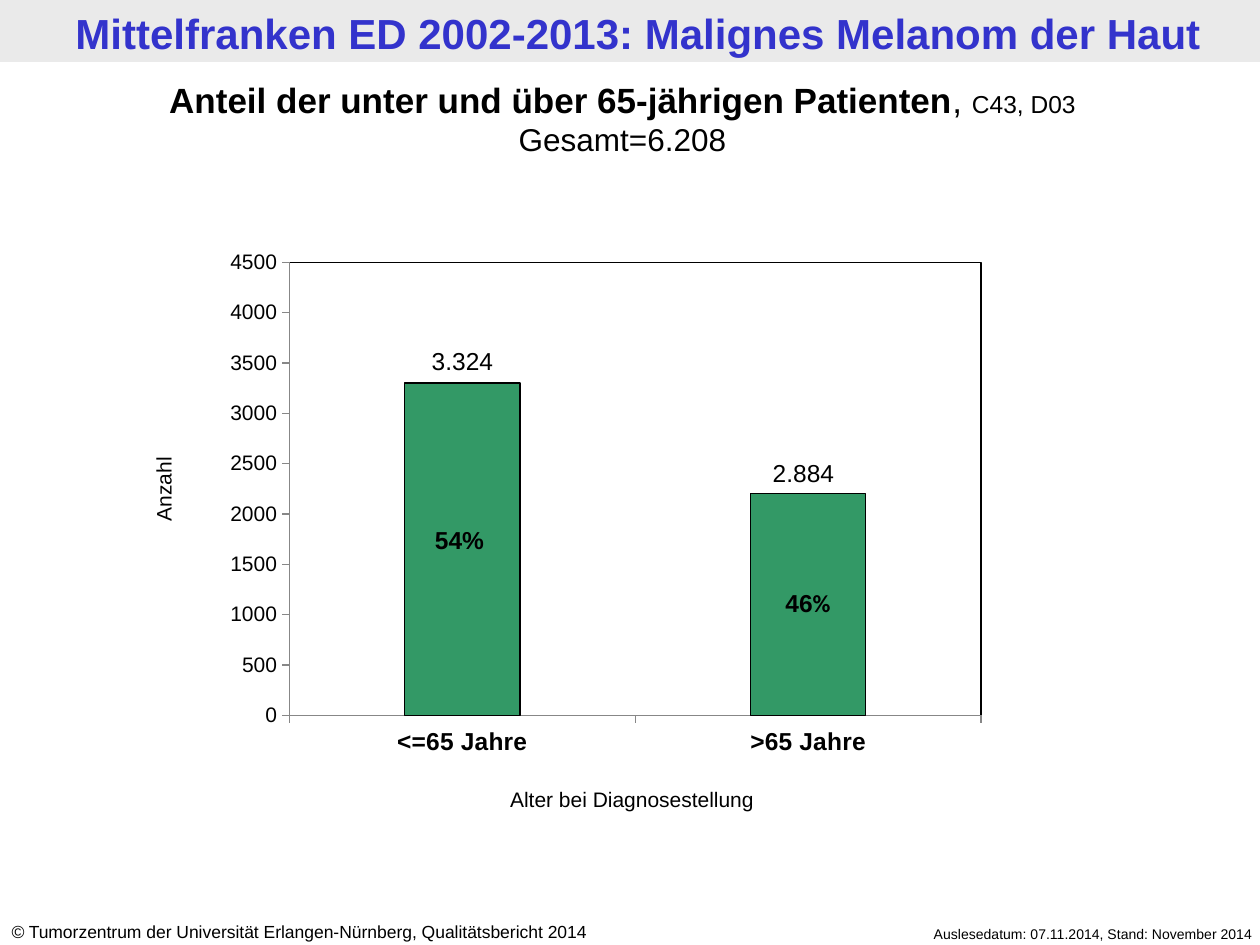
import pptx
import pptx.chart.data
import pptx.dml.color
import pptx.enum.chart
import pptx.enum.shapes
import pptx.enum.text
import pptx.oxml
import pptx.oxml.ns
import pptx.util
from dataclasses import dataclass

EMU_PER_PX = 914400 / 126
ALIGN = pptx.enum.text.PP_ALIGN


@dataclass(frozen=True)
class Theme:
    black: str = "000000"
    band: str = "EAEAEA"
    heading: str = "3333CC"
    bar: str = "339966"
    axis: str = "878787"
    font: str = "Arial"
    percent_font: str = "Calibri"
    title_size: int = 24
    subtitle_size: int = 20
    total_size: int = 18
    label_size: int = 14
    axis_size: int = 12
    source_size: int = 10
    date_size: int = 8
    line: float = 0.75


THEME = Theme()


def px(length):
    return pptx.util.Emu(round(length * EMU_PER_PX))


def rgb(value):
    return pptx.dml.color.RGBColor.from_string(value)


def set_font(font, size, bold=False, italic=False, color=THEME.black, name=THEME.font):
    font.size = pptx.util.Pt(size)
    font.bold = bold
    font.italic = italic
    font.name = name
    font.color.rgb = rgb(color)


def add_text(slide, box, paragraphs, align=ALIGN.CENTER, rotation=0, **base):
    """Paragraphs are a string, or lists of (text, own format) runs."""
    if isinstance(paragraphs, str):
        paragraphs = [[(paragraphs, {})]]
    textbox = slide.shapes.add_textbox(*map(px, box))
    textbox.rotation = rotation
    frame = textbox.text_frame
    frame.word_wrap = True
    frame.auto_size = pptx.enum.text.MSO_AUTO_SIZE.SHAPE_TO_FIT_TEXT
    for index, runs in enumerate(paragraphs):
        paragraph = frame.add_paragraph() if index else frame.paragraphs[0]
        paragraph.alignment = align
        for text, own in runs:
            run = paragraph.add_run()
            run.text = text
            set_font(run.font, **{**base, **own})


def add_title_band(slide):
    band = slide.shapes.add_shape(
        pptx.enum.shapes.MSO_SHAPE.RECTANGLE, *map(px, (0, 0, 1260, 62)))
    band.shadow.inherit = False
    band.fill.solid()
    band.fill.fore_color.rgb = rgb(THEME.band)
    band.line.fill.background()
    add_text(slide, (8, 1, 1260, 62), "Mittelfranken ED 2002-2013: Malignes Melanom der Haut",
             size=THEME.title_size, bold=True, color=THEME.heading)


def frame_plot(chart):
    """Fix the inner plot area and give it a black outline."""
    area = chart._chartSpace.chart.plotArea
    for old in area.findall(pptx.oxml.ns.qn("c:layout")):
        area.remove(old)
    edges = "".join(f'<c:{name} val="{value}"/>' for name, value in (
        ("layoutTarget", "inner"), ("xMode", "edge"), ("yMode", "edge"),
        ("x", 0.113), ("y", 0.142), ("w", 0.786), ("h", 0.772)))
    area.insert(0, pptx.oxml.parse_xml(
        f'<c:layout {pptx.oxml.ns.nsdecls("c")}><c:manualLayout>{edges}'
        '</c:manualLayout></c:layout>'))
    area.append(pptx.oxml.parse_xml(
        f'<c:spPr {pptx.oxml.ns.nsdecls("c", "a")}><a:noFill/>'
        f'<a:ln w="{pptx.util.Pt(THEME.line)}"><a:solidFill>'
        f'<a:srgbClr val="{THEME.black}"/></a:solidFill></a:ln></c:spPr>'))


def style_axis(axis, size, bold=False):
    axis.has_major_gridlines = False
    axis.major_tick_mark = pptx.enum.chart.XL_TICK_MARK.OUTSIDE
    axis.minor_tick_mark = pptx.enum.chart.XL_TICK_MARK.NONE
    axis.format.line.color.rgb = rgb(THEME.axis)
    axis.format.line.width = pptx.util.Pt(THEME.line)
    set_font(axis.tick_labels.font, size, bold)


def add_age_chart(slide):
    data = pptx.chart.data.CategoryChartData()
    data.categories = ["<=65 Jahre", ">65 Jahre"]
    data.add_series("Anzahl", (3300, 2200))
    chart = slide.shapes.add_chart(
        pptx.enum.chart.XL_CHART_TYPE.COLUMN_STACKED,
        *map(px, (190, 179, 880, 587)), data).chart
    chart.has_legend = False
    chart.has_title = False
    set_font(chart.font, THEME.total_size)

    plot = chart.plots[0]
    plot.vary_by_categories = False
    plot.gap_width = 200
    plot.overlap = 100
    bars = plot.series[0].format
    bars.fill.solid()
    bars.fill.fore_color.rgb = rgb(THEME.bar)
    bars.line.color.rgb = rgb(THEME.black)
    bars.line.width = pptx.util.Pt(THEME.line)

    style_axis(chart.category_axis, THEME.label_size, bold=True)
    counts = chart.value_axis
    style_axis(counts, THEME.axis_size)
    counts.minimum_scale = 0
    counts.maximum_scale = 4500
    counts.major_unit = 500
    counts.tick_labels.number_format = "0"
    counts.tick_labels.number_format_is_linked = False
    frame_plot(chart)


def main():
    deck = pptx.Presentation()
    deck.slide_width = px(1260)
    deck.slide_height = px(945)
    slide = deck.slides.add_slide(deck.slide_layouts[6])

    # Heading and footer
    add_title_band(slide)
    add_text(slide, (838, 919, 427, 30), "Auslesedatum: 07.11.2014, Stand: November 2014",
             align=ALIGN.RIGHT, size=THEME.date_size)
    add_text(slide, (-1, 915, 660, 34), [[
        ("©", {"italic": True}),
        (" Tumorzentrum der Universität Erlangen-Nürnberg, Qualitätsbericht 2014", {})]],
        align=ALIGN.LEFT, size=THEME.source_size)

    # Chart and its subtitle
    add_age_chart(slide)
    add_text(slide, (0, 72, 1245, 93), [
        [("Anteil der unter und über 65-jährigen Patienten", {"bold": True}),
         (", ", {}),
         ("C43, D03", {"size": THEME.label_size})],
        [("Gesamt=6.208", {"size": THEME.total_size})]], size=THEME.subtitle_size)

    # Shares inside the bars
    add_text(slide, (398, 519, 123, 43), "54%", size=THEME.label_size, bold=True)
    add_text(slide, (748, 582, 120, 43), [[("46", {}), ("%", {"name": THEME.percent_font})]],
             size=THEME.label_size, bold=True)

    # Axis titles
    add_text(slide, (422, 780, 420, 38), "Alter bei Diagnosestellung", size=THEME.axis_size)
    add_text(slide, (-1, 470, 329, 38), "Anzahl", rotation=270, size=THEME.axis_size)

    # Counts above the bars
    for left, top, count in ((398, 340, "3.324"), (739, 452, "2.884")):
        add_text(slide, (left, top, 129, 43), count, size=THEME.label_size)

    deck.save("out.pptx")


if __name__ == "__main__":
    main()
